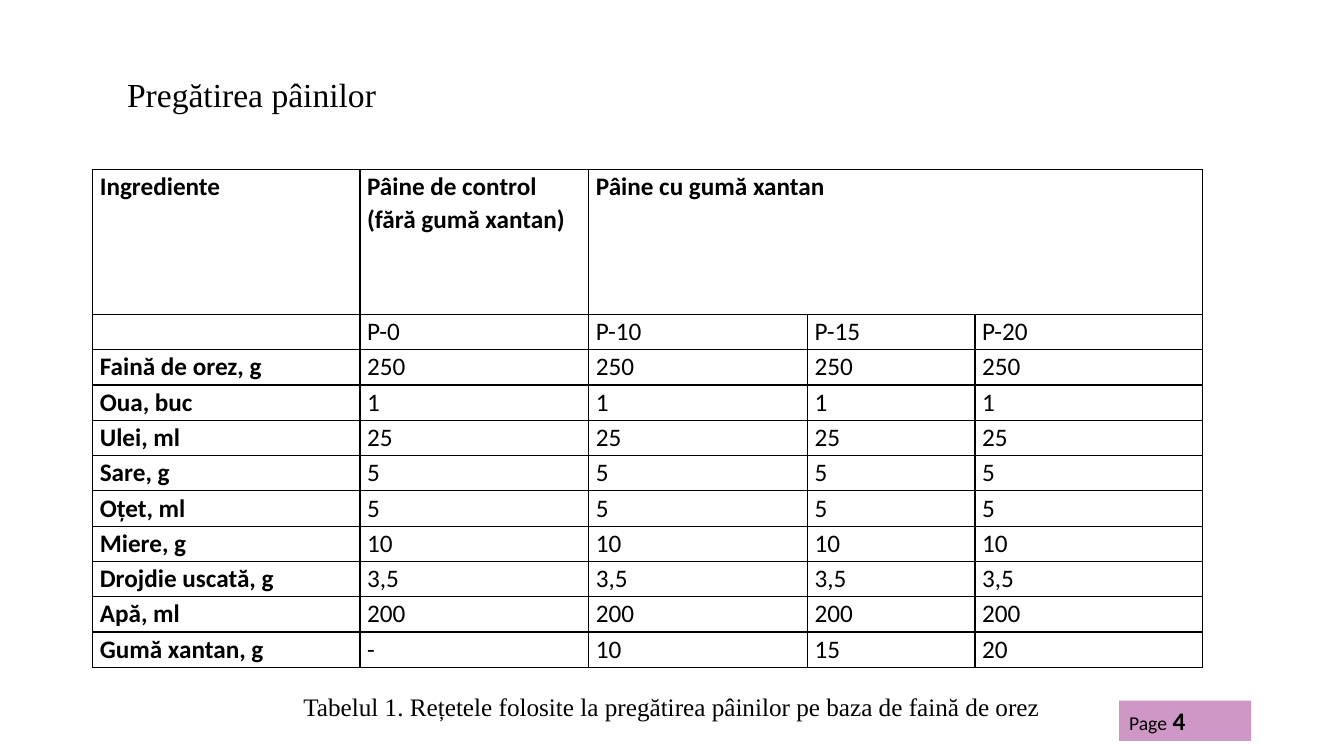
from dataclasses import dataclass

from lxml.etree import SubElement
from pptx import Presentation
from pptx.dml.color import RGBColor
from pptx.enum.shapes import MSO_SHAPE
from pptx.enum.text import MSO_ANCHOR, MSO_AUTO_SIZE, PP_ALIGN
from pptx.oxml.ns import qn
from pptx.oxml.xmlchemy import OxmlElement
from pptx.slide import Slide
from pptx.table import Table, _Cell
from pptx.text.text import Font, TextFrame
from pptx.util import Inches, Pt

SLIDE_WIDTH = Inches(13.33)
SLIDE_HEIGHT = Inches(7.5)


@dataclass(frozen=True)
class Theme:
    ink: str = "000000"
    paper: str = "FFFFFF"
    accent: str = "9F318D"
    accent_opacity: int = 50
    serif: str = "Times New Roman"
    sans: str = "Calibri"
    title_size: int = 24
    body_size: int = 18
    small_size: int = 14
    border_width: int = 1


@dataclass(frozen=True)
class Frame:
    left: float
    top: float
    width: float
    height: float

    def box(self) -> tuple[int, int, int, int]:
        return across(self.left), down(self.top), across(self.width), down(self.height)


@dataclass(frozen=True)
class Ingredient:
    name: str
    amounts: tuple[str, ...]


def same_for_all(name: str, amount: str) -> Ingredient:
    return Ingredient(name, (amount,) * 4)


THEME = Theme()
TITLE_FRAME = Frame(8.7, 6.53, 26.26, 12.53)
BADGE_FRAME = Frame(83.27, 92.67, 9.83, 5.33)
CAPTION_FRAME = Frame(21.83, 91.2, 57.69, 6.27)
TABLE_FRAME = Frame(6.9, 22.4, 82.52, 65.6)
COLUMN_SHARES = (19.88, 17.03, 16.28, 12.45, 16.95)
HEADER_SHARE = 19.2
ROW_SHARE = 4.67
CELL_INSET_SHARE = 0.53

HEADINGS = ("Ingrediente", "Pâine de control (fără gumă xantan)", "Pâine cu gumă xantan")
RECIPES = (
    Ingredient("", ("P-0", "P-10", "P-15", "P-20")),
    same_for_all("Faină de orez, g", "250"),
    same_for_all("Oua, buc", "1"),
    same_for_all("Ulei, ml", "25"),
    same_for_all("Sare, g", "5"),
    same_for_all("Oțet, ml", "5"),
    same_for_all("Miere, g", "10"),
    same_for_all("Drojdie uscată, g", "3,5"),
    same_for_all("Apă, ml", "200"),
    Ingredient("Gumă xantan, g", ("-", "10", "15", "20")),
)


def across(percent: float) -> int:
    return round(SLIDE_WIDTH * percent / 100)


def down(percent: float) -> int:
    return round(SLIDE_HEIGHT * percent / 100)


def style_font(font: Font, name: str, size: int, bold: bool = False) -> None:
    font.name = name
    font.size = Pt(size)
    font.bold = bold
    font.color.rgb = RGBColor.from_string(THEME.ink)


def write_serif(text_frame: TextFrame, text: str, size: int, anchor: MSO_ANCHOR) -> None:
    text_frame.text = text
    text_frame.word_wrap = True
    text_frame.auto_size = MSO_AUTO_SIZE.NONE
    text_frame.vertical_anchor = anchor
    paragraph = text_frame.paragraphs[0]
    paragraph.alignment = PP_ALIGN.LEFT
    paragraph.line_spacing = 0.9
    style_font(paragraph.runs[0].font, THEME.serif, size)


def add_title(slide: Slide) -> None:
    title = slide.shapes.title
    title.left, title.top, title.width, title.height = TITLE_FRAME.box()
    write_serif(title.text_frame, "Pregătirea pâinilor", THEME.title_size, MSO_ANCHOR.MIDDLE)


def add_caption(slide: Slide) -> None:
    caption = slide.shapes.add_textbox(*CAPTION_FRAME.box())
    text = "Tabelul 1. Rețetele folosite la pregătirea pâinilor pe baza de faină de orez"
    write_serif(caption.text_frame, text, THEME.body_size, MSO_ANCHOR.TOP)


def add_page_badge(slide: Slide) -> None:
    badge = slide.shapes.add_shape(MSO_SHAPE.RECTANGLE, *BADGE_FRAME.box())
    badge.shadow.inherit = False
    badge.line.fill.background()
    badge.fill.solid()
    badge.fill.fore_color.rgb = RGBColor.from_string(THEME.accent)
    color = badge.element.spPr.find(".//" + qn("a:srgbClr"))
    SubElement(color, qn("a:alpha"), val=str(THEME.accent_opacity * 1000))
    badge.text_frame.vertical_anchor = MSO_ANCHOR.TOP
    paragraph = badge.text_frame.paragraphs[0]
    paragraph.alignment = PP_ALIGN.LEFT
    for text, size, bold in (("Page", THEME.small_size, False), (" 4", THEME.body_size, True)):
        run = paragraph.add_run()
        run.text = text
        style_font(run.font, THEME.sans, size, bold)


def add_borders(cell: _Cell) -> None:
    properties = cell._tc.get_or_add_tcPr()
    for index, side in enumerate(("a:lnL", "a:lnR", "a:lnT", "a:lnB")):
        border = OxmlElement(side)
        border.set("w", str(Pt(THEME.border_width)))
        fill = SubElement(border, qn("a:solidFill"))
        SubElement(fill, qn("a:srgbClr"), val=THEME.ink)
        properties.insert(index, border)


def format_cell(cell: _Cell) -> None:
    cell.margin_left = cell.margin_right = across(CELL_INSET_SHARE)
    cell.margin_top = cell.margin_bottom = 0
    cell.vertical_anchor = MSO_ANCHOR.TOP
    cell.fill.solid()
    cell.fill.fore_color.rgb = RGBColor.from_string(THEME.paper)
    add_borders(cell)


def write_cell(table: Table, row: int, column: int, text: str, bold: bool) -> None:
    cell = table.cell(row, column)
    cell.text_frame.text = text
    paragraph = cell.text_frame.paragraphs[0]
    paragraph.line_spacing = 1.07
    paragraph.space_after = Pt(8)
    for run in paragraph.runs:
        style_font(run.font, THEME.sans, THEME.body_size, bold)


def add_recipe_table(slide: Slide) -> None:
    row_count = len(RECIPES) + 1
    column_count = len(COLUMN_SHARES)
    table = slide.shapes.add_table(row_count, column_count, *TABLE_FRAME.box()).table
    table.first_row = table.horz_banding = False
    for column, share in zip(table.columns, COLUMN_SHARES):
        column.width = across(share)
    for index, row in enumerate(table.rows):
        row.height = down(ROW_SHARE if index else HEADER_SHARE)
    for cell in table.iter_cells():
        format_cell(cell)
    table.cell(0, 2).merge(table.cell(0, column_count - 1))
    for column, heading in enumerate(HEADINGS):
        write_cell(table, 0, column, heading, True)
    for row, ingredient in enumerate(RECIPES, start=1):
        for column, text in enumerate((ingredient.name, *ingredient.amounts)):
            write_cell(table, row, column, text, column == 0)


def main() -> None:
    presentation = Presentation()
    presentation.slide_width = SLIDE_WIDTH
    presentation.slide_height = SLIDE_HEIGHT
    slide = presentation.slides.add_slide(presentation.slide_layouts.get_by_name("Title Only"))
    add_title(slide)
    add_page_badge(slide)
    add_caption(slide)
    add_recipe_table(slide)
    presentation.save("out.pptx")


if __name__ == "__main__":
    main()
